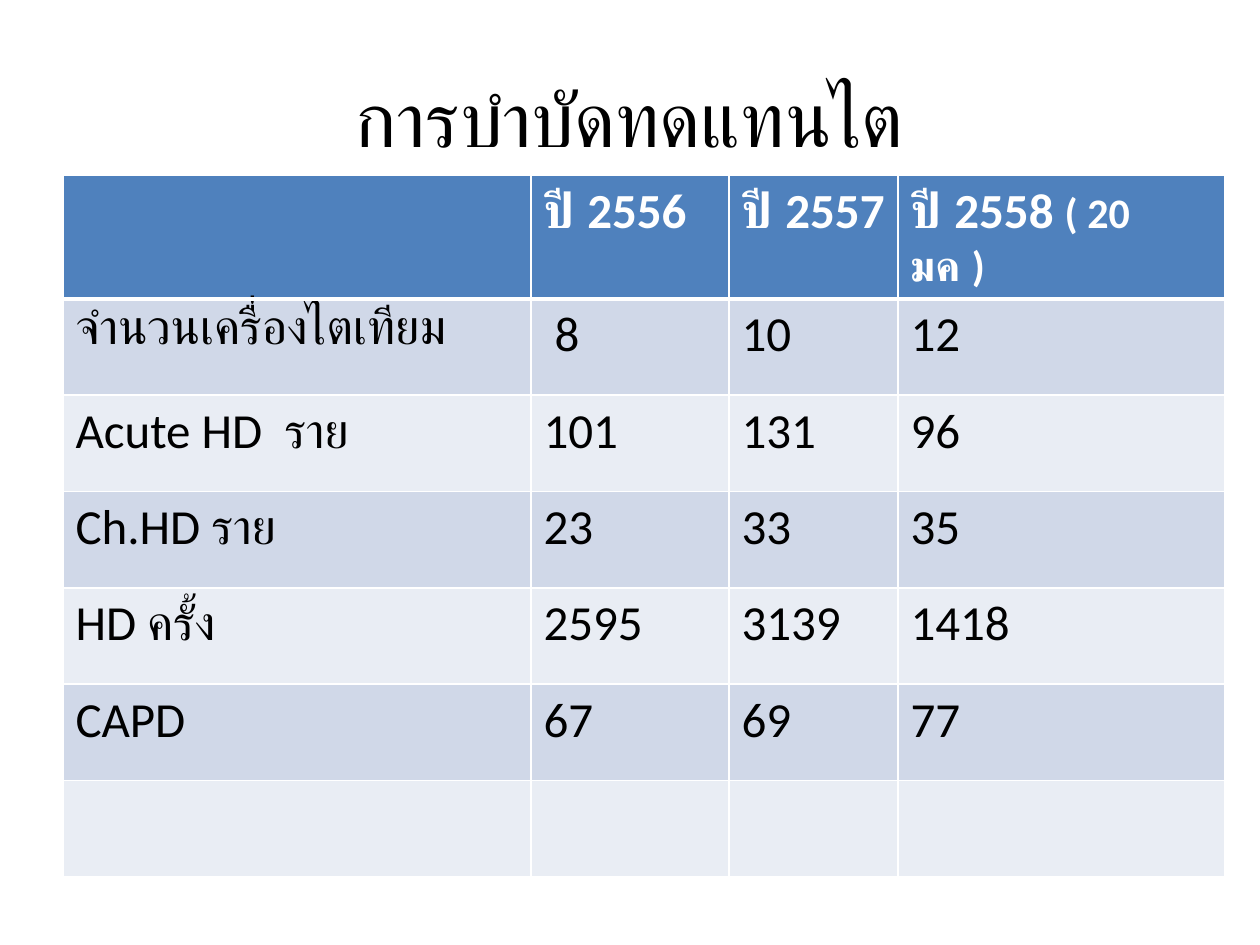
from lxml import etree
from pptx import Presentation
from pptx.dml.color import RGBColor
from pptx.enum.text import MSO_ANCHOR, PP_ALIGN
from pptx.oxml.ns import qn
from pptx.util import Inches, Pt

CENTER = PP_ALIGN.CENTER
MIDDLE = MSO_ANCHOR.MIDDLE
FONT = "Calibri"
BLACK, WHITE, HEADER = "000000", "FFFFFF", "4F81BD"
BANDS = ("D0D8E8", "E9EDF4")
COLUMN_WIDTHS = (3.71, 1.57, 1.34, 2.59)
HEADINGS = (
    (),
    (("ปี 2556", 28),),
    (("ปี 2557", 28),),
    (("ปี 2558 ", 28), ("( 20 มค )", 24)),
)
TREATMENTS = (
    ("จำนวนเครื่องไตเทียม", " 8", "10", "12"),
    ("Acute HD  ราย", "101", "131", "96"),
    ("Ch.HD ราย", "23", "33", "35"),
    ("HD ครั้ง", "2595", "3139", "1418"),
    ("CAPD", "67", "69", "77"),
    ("", "", "", ""),
)


def color(hex_string):
    """Turn a hex string into a colour."""
    return RGBColor.from_string(hex_string)


def add_run(paragraph, text, size, hex_color, bold=False):
    """Add one formatted run to a paragraph."""
    run = paragraph.add_run()
    run.text = text
    run.font.name = FONT
    run.font.size = Pt(size)
    run.font.bold = bold
    run.font.color.rgb = color(hex_color)


def set_borders(cell, bottom_width):
    """Give a cell white edges, with its own width at the bottom."""
    properties = cell._tc.get_or_add_tcPr()
    widths = {"a:lnL": 1, "a:lnR": 1, "a:lnT": 1, "a:lnB": bottom_width}
    for position, (tag, width) in enumerate(widths.items()):
        line = etree.Element(qn(tag), w=str(Pt(width)))
        fill = etree.SubElement(line, qn("a:solidFill"))
        etree.SubElement(fill, qn("a:srgbClr"), val=WHITE)
        properties.insert(position, line)


def fill_cell(cell, runs, background, text_color, bold, bottom_width):
    """Format one cell and write its runs."""
    cell.fill.solid()
    cell.fill.fore_color.rgb = color(background)
    set_borders(cell, bottom_width)
    for text, size in runs:
        add_run(cell.text_frame.paragraphs[0], text, size, text_color, bold)


def place_title(slide, text, left, top, width, height):
    """Place the centred slide title in the given box."""
    title = slide.shapes.title
    title.left, title.top = Inches(left), Inches(top)
    title.width, title.height = Inches(width), Inches(height)
    title.text_frame.vertical_anchor = MIDDLE
    paragraph = title.text_frame.paragraphs[0]
    paragraph.alignment = CENTER
    add_run(paragraph, text, 44, BLACK)


def place_treatment_table(slide, left, top, width, height):
    """Place the yearly treatment table in the given box."""
    table = slide.shapes.add_table(
        len(TREATMENTS) + 1, len(COLUMN_WIDTHS),
        Inches(left), Inches(top), Inches(width), Inches(height),
    ).table
    for column, share in zip(table.columns, COLUMN_WIDTHS):
        column.width = Inches(width * share / sum(COLUMN_WIDTHS))
    for column, runs in enumerate(HEADINGS):
        fill_cell(table.cell(0, column), runs, HEADER, WHITE, True, 3)
    for row, values in enumerate(TREATMENTS, start=1):
        background = BANDS[(row - 1) % 2]
        for column, value in enumerate(values):
            runs = ((value, 28),) if value else ()
            fill_cell(table.cell(row, column), runs, background, BLACK, False, 1)


def main():
    """Build and save the presentation."""
    presentation = Presentation()
    presentation.slide_width, presentation.slide_height = Inches(10), Inches(7.5)
    slide = presentation.slides.add_slide(presentation.slide_layouts[5])
    place_title(slide, "การบำบัดทดแทนไต", 0.5, 0.3, 9, 1.25)
    place_treatment_table(slide, 0.5, 1.39, 9.22, 5.35)
    presentation.save("out.pptx")


if __name__ == "__main__":
    main()
